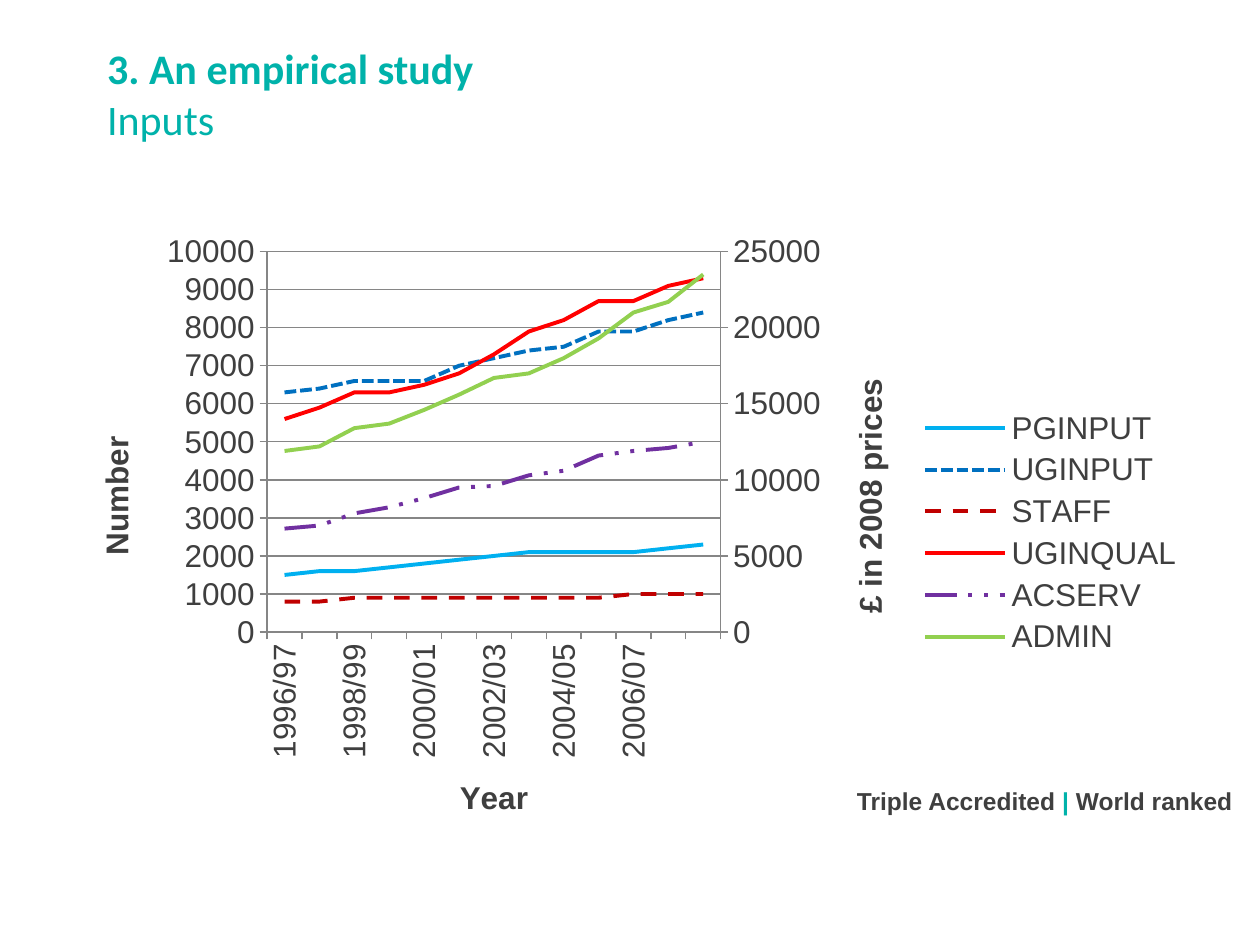
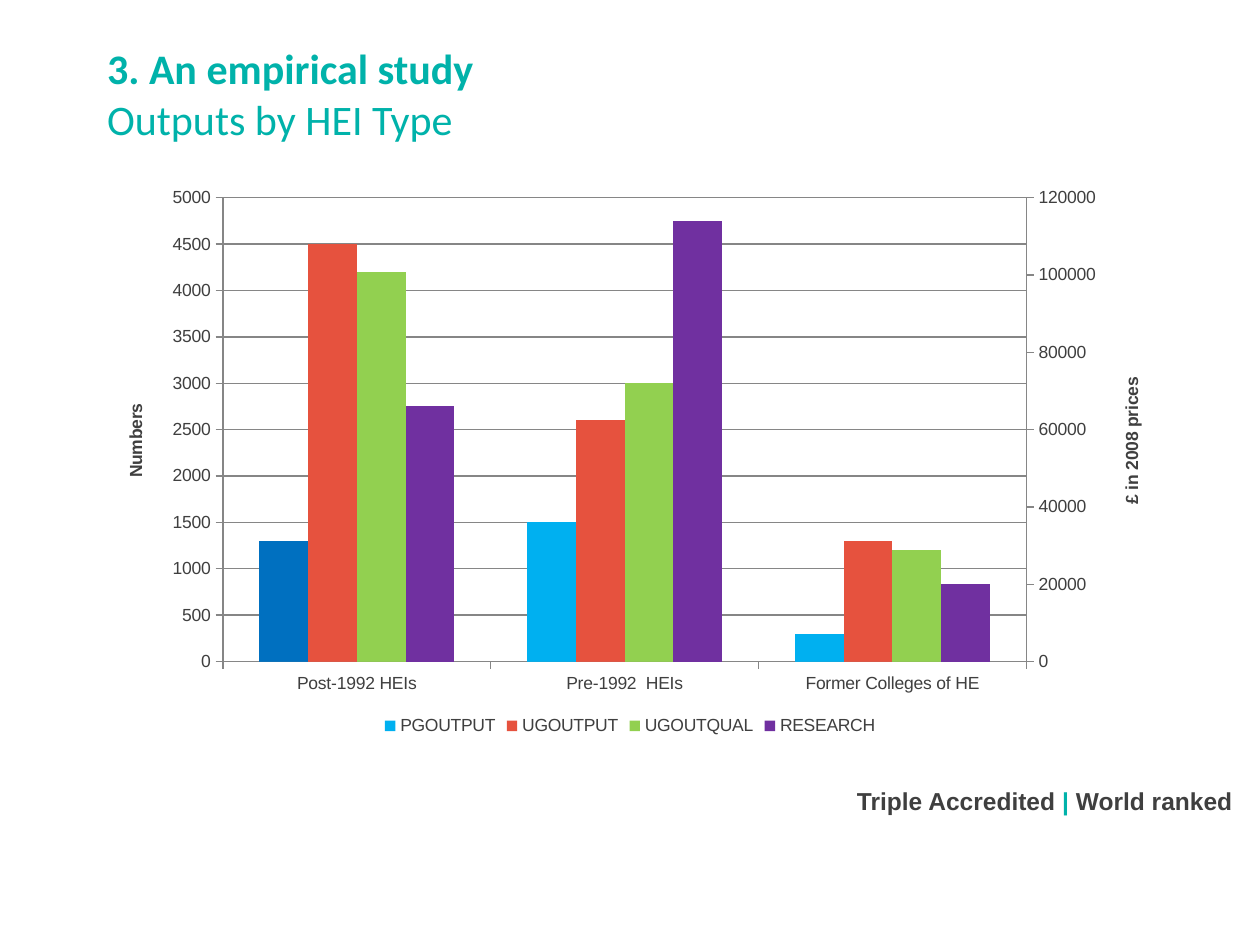
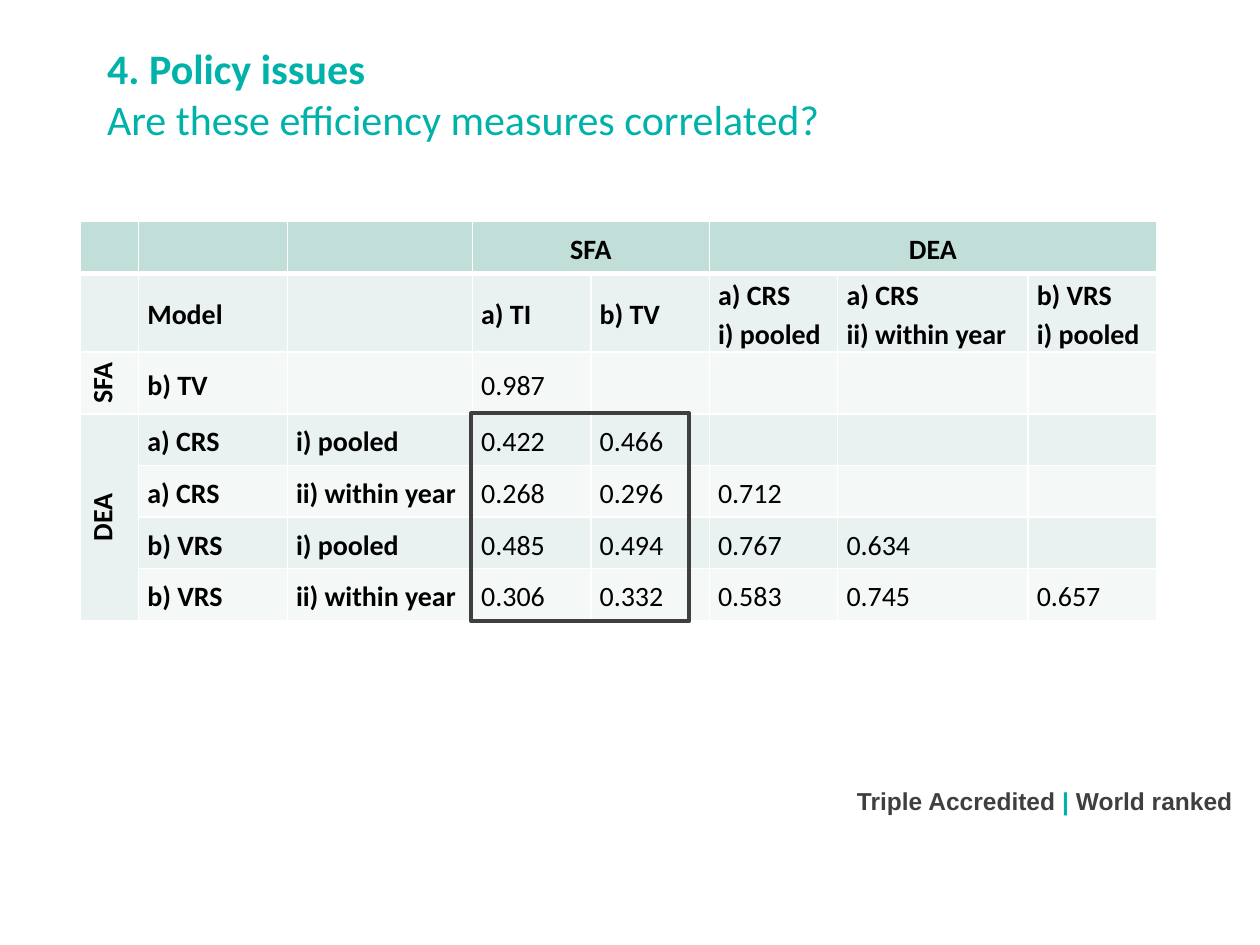
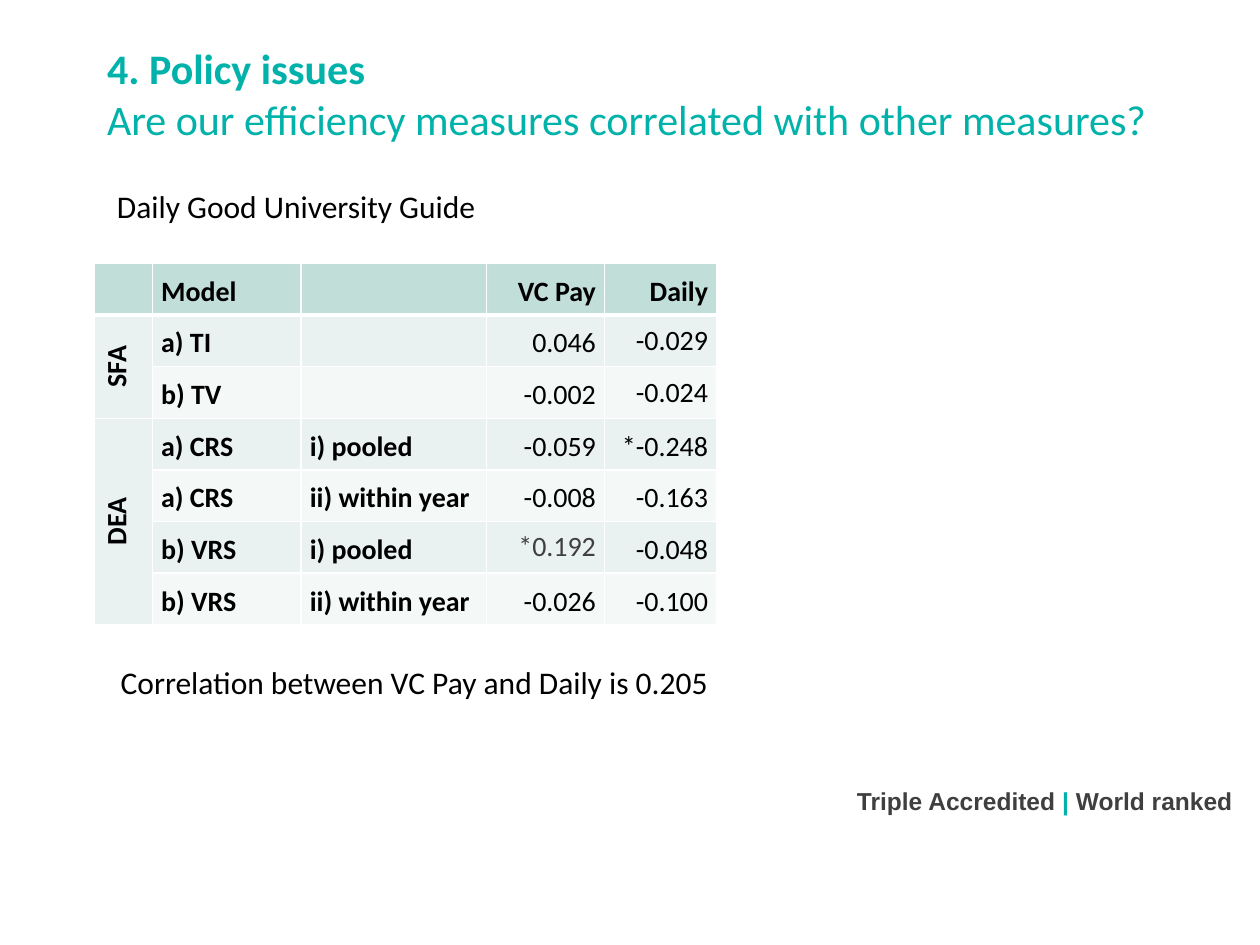
from copy import deepcopy

from pptx import Presentation
from pptx.chart.data import CategoryChartData
from pptx.dml.color import RGBColor
from pptx.enum.chart import XL_CHART_TYPE as CHART, XL_LEGEND_POSITION as LEGEND
from pptx.enum.chart import XL_MARKER_STYLE as MARKER, XL_TICK_MARK as TICK
from pptx.enum.dml import MSO_LINE as DASH
from pptx.enum.shapes import MSO_SHAPE as SHAPE
from pptx.enum.text import MSO_ANCHOR as ANCHOR, MSO_AUTO_SIZE as AUTO, PP_ALIGN as ALIGN
from pptx.oxml import parse_xml
from pptx.oxml.ns import nsdecls
from pptx.util import Inches, Pt

TEAL = RGBColor(0x00, 0xB2, 0xAA)
DARK = RGBColor(0x3F, 0x3F, 0x3F)
GREY = RGBColor(0x86, 0x86, 0x86)
BLACK = RGBColor(0x00, 0x00, 0x00)
HEADER = RGBColor(0xC2, 0xDE, 0xD9)
BANDS = RGBColor(0xF4, 0xF9, 0xF8), RGBColor(0xE9, 0xF2, 0xF1)

SKY = RGBColor(0x00, 0xB0, 0xF0)
BLUE = RGBColor(0x00, 0x70, 0xC0)
BRICK = RGBColor(0xC0, 0x00, 0x00)
RED = RGBColor(0xFF, 0x00, 0x00)
PURPLE = RGBColor(0x70, 0x30, 0xA0)
GREEN = RGBColor(0x92, 0xD0, 0x50)
CORAL = RGBColor(0xE6, 0x52, 0x3E)

BODY_FONT = "Calibri"
LABEL_FONT = "Arial"
ROW_HEIGHT = 0.41
VERTICAL = "-5400000"


def style(font, name, size, color, bold=False):
    font.name, font.size, font.bold = name, Pt(size), bold
    font.color.rgb = color


def set_axis(axis, title, size):
    axis.major_tick_mark = TICK.OUTSIDE
    axis.format.line.color.rgb = GREY
    axis.has_title = bool(title)
    if title:
        tf = axis.axis_title.text_frame
        tf.text = title
        style(tf.paragraphs[0].runs[0].font, LABEL_FONT, size, DARK, True)


def add_right_axis(chart, first, title, top, unit):
    """Move the series from number first on to a second value axis at the right."""
    area = chart.element.xpath("c:chart/c:plotArea")[0]
    left = area.xpath("c:lineChart | c:barChart")[0]
    right = deepcopy(left)
    for ser in left.xpath("c:ser")[first:]:
        left.remove(ser)
    for ser in right.xpath("c:ser")[:first]:
        right.remove(ser)
    left.addnext(right)

    cat_ax, val_ax = area.xpath("c:catAx")[0], area.xpath("c:valAx")[0]
    right_cat, right_val = deepcopy(cat_ax), deepcopy(val_ax)
    val_ax.addnext(right_val)
    right_val.addnext(right_cat)
    for node, number in zip(right.xpath("c:axId"), ("5001", "5002")):
        node.set("val", number)
    for ax, own, other in (right_cat, "5001", "5002"), (right_val, "5002", "5001"):
        ax.xpath("c:axId")[0].set("val", own)
        ax.xpath("c:crossAx")[0].set("val", other)
    right_cat.xpath("c:delete")[0].set("val", "1")
    for node in right_cat.xpath("c:title") + right_val.xpath("c:majorGridlines"):
        node.getparent().remove(node)
    for tag, value in (("c:axPos", "r"), ("c:crosses", "max"),
                       ("c:scaling/c:max", str(top)), ("c:majorUnit", str(unit))):
        right_val.xpath(tag)[0].set("val", value)
    right_val.xpath("c:title//a:t")[0].text = title


def set_plot_layout(chart, x, y, w, h):
    area = chart.element.xpath("c:chart/c:plotArea")[0]
    for node in area.xpath("c:layout"):
        area.remove(node)
    sizes = "".join(f'<c:{tag} val="{value}"/>'
                    for tag, value in zip("xywh", (x, y, w, h)))
    area.insert(0, parse_xml(
        f'<c:layout {nsdecls("c")}><c:manualLayout><c:layoutTarget val="inner"/>'
        f'<c:xMode val="edge"/><c:yMode val="edge"/>{sizes}'
        '</c:manualLayout></c:layout>'))


def set_borders(cell, bottom):
    tc_pr = cell._tc.get_or_add_tcPr()
    for i, (side, width) in enumerate(zip("LRTB", (1, 1, 1, bottom))):
        tc_pr.insert(i, parse_xml(
            f'<a:ln{side} {nsdecls("a")} w="{Pt(width)}"><a:solidFill>'
            f'<a:srgbClr val="FFFFFF"/></a:solidFill></a:ln{side}>'))


class Deck:
    def __init__(self):
        self.prs = Presentation()
        self.prs.slide_width, self.prs.slide_height = Inches(10), Inches(7.5)
        self.s = None

    def slide(self, heading, subject):
        self.s = self.prs.slides.add_slide(self.prs.slide_layouts[5])
        sp = self.s.shapes.title
        sp.left, sp.top, sp.width, sp.height = map(Inches, (0.75, 0.29, 8.5, 0.8))
        tf = sp.text_frame
        tf.text = f"{heading}\v{subject}"
        tf.auto_size, tf.vertical_anchor = AUTO.NONE, ANCHOR.TOP
        p = tf.paragraphs[0]
        p.alignment = ALIGN.LEFT
        for r, bold in zip(p.runs, (True, False)):
            style(r.font, BODY_FONT, 24, TEAL, bold)

    def text(self, box, text, size=18):
        sp = self.s.shapes.add_textbox(*map(Inches, box))
        tf = sp.text_frame
        tf.text = text
        tf.word_wrap, tf.auto_size = True, AUTO.SHAPE_TO_FIT_TEXT
        p = tf.paragraphs[0]
        p.line_spacing = 1.15
        style(p.runs[0].font, BODY_FONT, size, BLACK)
        return sp

    def master_footer(self):
        """Build the footer on the current slide and hand it to the master."""
        sp = self.text((6.65, 6.19, 3.23, 0.34), "Triple Accredited", 14)
        p = sp.text_frame.paragraphs[0]
        p.alignment, p.line_spacing = ALIGN.RIGHT, 1.0
        for part in " | ", "World ranked":
            p.add_run().text = part
        for r, color in zip(p.runs, (DARK, TEAL, DARK)):
            style(r.font, LABEL_FONT, 14, color, True)
        sp.element.nvSpPr.cNvPr.set("id", "20")
        self.prs.slide_master.shapes.element.append(sp.element)

    def frame(self, box):
        sp = self.s.shapes.add_shape(SHAPE.RECTANGLE, *map(Inches, box))
        sp.shadow.inherit = False
        sp.fill.background()
        sp.line.color.rgb, sp.line.width = DARK, Pt(2.25)

    def chart(self, kind, box, cats, series, size, left, legend, layout, cat_title=None):
        """left is (title, maximum, major unit) of the left value axis."""
        data = CategoryChartData()
        data.categories = cats
        for name, _, values in series:
            data.add_series(name, values)
        chart = self.s.shapes.add_chart(kind, *map(Inches, box), data).chart
        style(chart.font, LABEL_FONT, size, DARK)
        chart.has_title = False
        chart.has_legend = True
        chart.legend.position = legend
        chart.legend.include_in_layout = False
        chart.plots[0].vary_by_categories = False

        set_axis(chart.category_axis, cat_title, size)
        axis = chart.value_axis
        title, top, unit = left
        set_axis(axis, title, size)
        axis.axis_title.text_frame._txBody.bodyPr.set("rot", VERTICAL)
        axis.minimum_scale, axis.maximum_scale, axis.major_unit = 0, top, unit
        axis.has_major_gridlines = True
        axis.major_gridlines.format.line.color.rgb = GREY

        for ser, (_, color, _) in zip(chart.plots[0].series, series):
            if kind == CHART.LINE:
                ser.smooth = False
                ser.marker.style = MARKER.NONE
                ser.format.line.color.rgb, ser.format.line.width = color, Pt(2.25)
            else:
                ser.format.fill.solid()
                ser.format.fill.fore_color.rgb = color
        set_plot_layout(chart, *layout)
        return chart

    def table(self, left, top, widths, rows, spans, tall=None, right_from=99, tight=()):
        """tall maps rows to heights; cells from column right_from on align right;
        tight ones are single spaced."""
        heights = [(tall or {}).get(i, ROW_HEIGHT) for i in range(len(rows))]
        box = left, top, sum(widths), sum(heights)
        table = self.s.shapes.add_table(len(rows), len(widths), *map(Inches, box)).table
        table.horz_banding = False
        for col, width in zip(table.columns, widths):
            col.width = Inches(width)
        for i, row in enumerate(rows):
            table.rows[i].height = Inches(heights[i])
            for j, text in enumerate(row):
                spacing = 1.0 if text in tight else 1.15
                align = ALIGN.RIGHT if j >= right_from else ALIGN.LEFT
                self.cell(table.cell(i, j), i, j, text, align, spacing)
        for i, j, high, wide in spans:
            cell = table.cell(i, j)
            cell.merge(table.cell(i + high - 1, j + wide - 1))
            cell.text_frame.paragraphs[0].alignment = ALIGN.CENTER
        return table

    def cell(self, cell, row, col, text, align, spacing):
        cell.fill.solid()
        cell.fill.fore_color.rgb = BANDS[row % 2] if row else HEADER
        cell.vertical_anchor = ANCHOR.MIDDLE
        cell.margin_left = cell.margin_right = Inches(0.07)
        cell.margin_top = cell.margin_bottom = 0
        set_borders(cell, 1 if row else 3)
        cell.text_frame.text = text
        bold = not text.lstrip("*-")[:1].isdigit()
        for p in cell.text_frame.paragraphs:
            p.alignment, p.line_spacing = align, spacing
            for r in p.runs:
                style(r.font, BODY_FONT, 16, BLACK, bold)
        if col == 0 and text:
            cell._tc.get_or_add_tcPr().set("vert", "vert270")
            cell.margin_left = cell.margin_right = 0
            cell.text_frame.paragraphs[0].alignment = ALIGN.CENTER


def inputs_slide(deck):
    deck.slide("3. An empirical study", "Inputs")
    deck.master_footer()
    years = [f"{y}/{(y + 1) % 100:02}" for y in range(1996, 2008)] + [""]
    series = [
        ("PGINPUT", SKY, (1500, 1600, 1600, 1700, 1800, 1900, 2000,
                          2100, 2100, 2100, 2100, 2200, 2300)),
        ("UGINPUT", BLUE, (6300, 6400, 6600, 6600, 6600, 7000, 7200,
                           7400, 7500, 7900, 7900, 8200, 8400)),
        ("STAFF", BRICK, (800, 800, 900, 900, 900, 900, 900,
                          900, 900, 900, 1000, 1000, 1000)),
        ("UGINQUAL", RED, (5600, 5900, 6300, 6300, 6500, 6800, 7300,
                           7900, 8200, 8700, 8700, 9100, 9300)),
        ("ACSERV", PURPLE, (6800, 7000, 7800, 8200, 8800, 9500, 9600,
                            10300, 10600, 11600, 11900, 12100, 12500)),
        ("ADMIN", GREEN, (11900, 12200, 13400, 13700, 14600, 15600, 16700,
                          17000, 18000, 19300, 21000, 21700, 23500)),
    ]
    chart = deck.chart(
        CHART.LINE, (0.5, 1.75, 9, 4.95), years, series, 18,
        ("Number", 10000, 1000), LEGEND.RIGHT, (0.18, 0.05, 0.4, 0.61), "Year")
    dashes = {1: DASH.SQUARE_DOT, 2: DASH.DASH, 4: DASH.DASH_DOT_DOT}
    for i, dash in dashes.items():
        chart.plots[0].series[i].format.line.dash_style = dash
    style(chart.category_axis.tick_labels.font, LABEL_FONT, 18, DARK)
    chart.element.xpath(".//c:catAx/c:txPr/a:bodyPr")[0].set("rot", VERTICAL)
    add_right_axis(chart, 4, "£ in 2008 prices", 25000, 5000)


def outputs_slide(deck):
    deck.slide("3. An empirical study ", "Outputs by HEI Type")
    # Zero series keep a free slot on each axis, so the bars stand side by side
    spacers = [(f"Series {n}", GREY, (0, 0, 0)) for n in range(4, 8)]
    series = [
        ("PGOUTPUT", SKY, (1300, 1500, 300)),
        ("UGOUTPUT", CORAL, (4500, 2600, 1300)),
        ("UGOUTQUAL", GREEN, (4200, 3000, 1200)),
        *spacers,
        ("RESEARCH", PURPLE, (66000, 114000, 20000)),
    ]
    chart = deck.chart(
        CHART.COLUMN_CLUSTERED, (0.75, 1.39, 8.5, 4.49),
        ("Post-1992 HEIs", "Pre-1992  HEIs", "Former Colleges of HE"), series, 10,
        ("Numbers", 5000, 500), LEGEND.BOTTOM, (0.12, 0.04, 0.75, 0.82))
    chart.plots[0].gap_width = 150
    fill = chart.plots[0].series[0].points[0].format.fill
    fill.solid()
    fill.fore_color.rgb = BLUE
    position = chart.element.xpath(".//c:legendPos")[0]
    for i in (6, 5, 4, 3):
        position.addnext(parse_xml(
            f'<c:legendEntry {nsdecls("c")}><c:idx val="{i}"/>'
            '<c:delete val="1"/></c:legendEntry>'))
    add_right_axis(chart, 4, "£ in 2008 prices", 120000, 20000)


def measures_slide(deck):
    deck.slide("4. Policy issues ", "Are these efficiency measures correlated?")
    rows = [
        ("", "", "", "SFA", "", "DEA", "", ""),
        ("", "Model", "", "a) TI", "b) TV", "a) CRS\ni) pooled",
         "a) CRS\nii) within year", "b) VRS\ni) pooled"),
        ("SFA", "b) TV", "", "0.987", "", "", "", ""),
        ("DEA", "a) CRS", "i) pooled", "0.422", "0.466", "", "", ""),
        ("", "a) CRS", "ii) within year", "0.268", "0.296", "0.712", "", ""),
        ("", "b) VRS", "i) pooled", "0.485", "0.494", "0.767", "0.634", ""),
        ("", "b) VRS", "ii) within year", "0.306", "0.332", "0.583", "0.745", "0.657"),
    ]
    deck.table(0.64, 1.76, (0.46, 1.18, 1.47, 0.94, 0.94, 1.02, 1.51, 1.02), rows,
               spans=[(0, 3, 1, 2), (0, 5, 1, 3), (3, 0, 4, 1)],
               tall={1: 0.62, 2: 0.49})
    deck.frame((3.74, 3.28, 1.73, 1.65))


def other_measures_slide(deck):
    deck.slide("4. Policy issues ",
               "Are our efficiency measures correlated with other measures?")
    rows = [
        ("", "Model", "", "VC Pay", "Daily"),
        ("SFA", "a) TI", "", "0.046", "-0.029"),
        ("", "b) TV", "", "-0.002", "-0.024"),
        ("DEA", "a) CRS", "i) pooled", "-0.059", "*-0.248"),
        ("", "a) CRS", "ii) within year", "-0.008", "-0.163"),
        ("", "b) VRS", "i) pooled", "*0.192", "-0.048"),
        ("", "b) VRS", "ii) within year", "-0.026", "-0.100"),
    ]
    table = deck.table(0.75, 2.09, (0.46, 1.18, 1.47, 0.94, 0.89), rows,
                       spans=[(1, 0, 2, 1), (3, 0, 4, 1)], right_from=3,
                       tight=("-0.029", "-0.024", "*0.192"))
    vrs_pay = table.cell(5, 3).text_frame.paragraphs[0].runs[0]
    vrs_pay.font.color.rgb = DARK
    deck.text((0.83, 1.39, 3.62, 0.43), "Daily Good University Guide")
    deck.text((0.86, 5.17, 5.16, 0.45), "Correlation between VC Pay and Daily is 0.205")


def main():
    deck = Deck()
    inputs_slide(deck)
    outputs_slide(deck)
    measures_slide(deck)
    other_measures_slide(deck)
    deck.prs.save("out.pptx")


if __name__ == "__main__":
    main()
